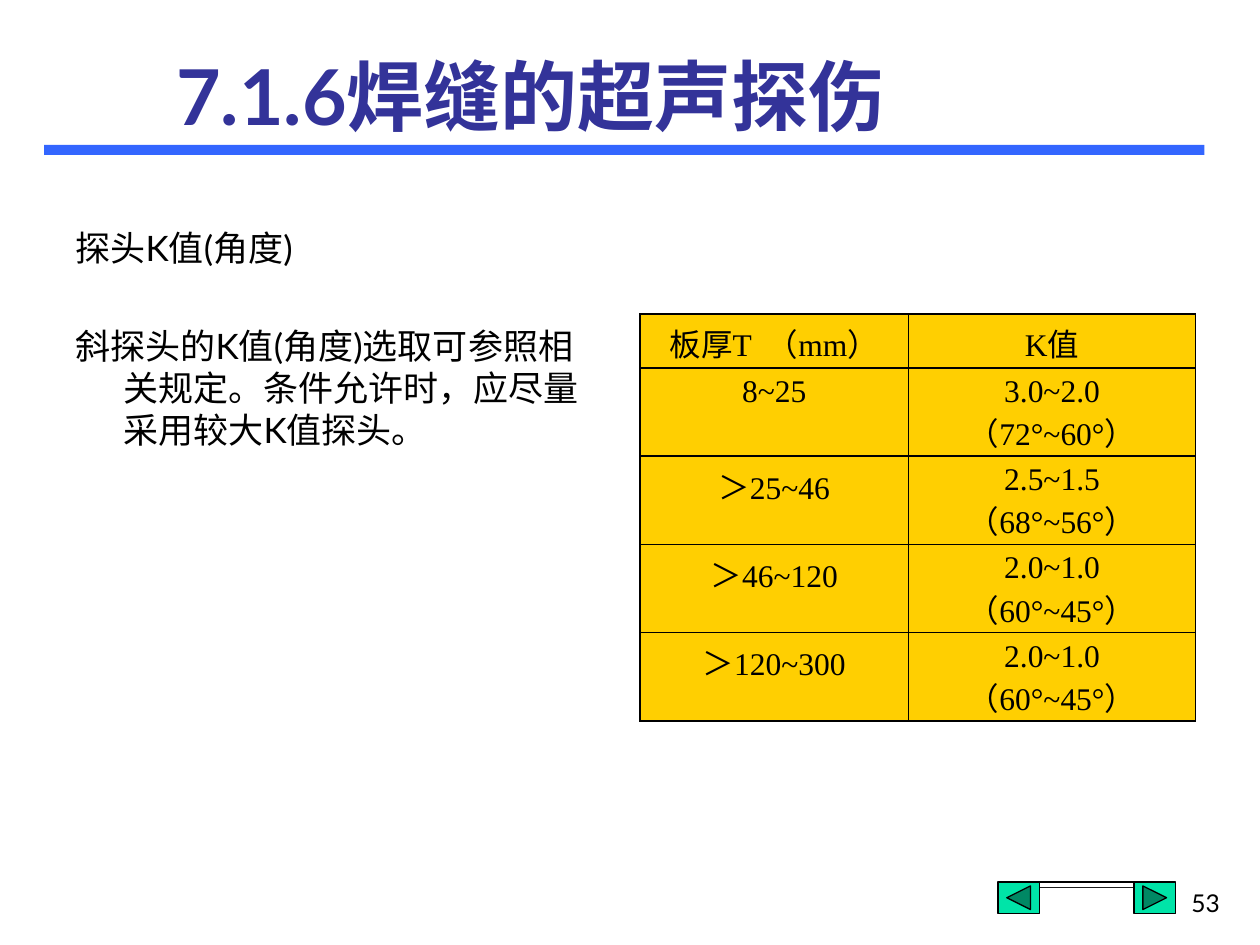
from lxml import etree
from pptx import Presentation
from pptx.dml.color import RGBColor
from pptx.enum import shapes, text
from pptx.oxml import parse_xml
from pptx.oxml.ns import qn
from pptx.util import Inches, Pt

BLACK = RGBColor(0, 0, 0)
TITLE_BLUE = RGBColor(0x33, 0x33, 0x99)
RULE_BLUE = RGBColor(0x33, 0x66, 0xFF)
ROOF_BLUE = RGBColor(0x33, 0x33, 0xCC)
WHITE = RGBColor(0xFF, 0xFF, 0xFF)
BUTTON_GREEN = RGBColor(0x00, 0xE4, 0xA8)
TABLE_GOLD = RGBColor(0xFF, 0xCF, 0x01)
CJK_FONT = "Noto Sans CJK SC"
DRAWING_NS = 'xmlns:a="http://schemas.openxmlformats.org/drawingml/2006/main"'


def style_run(run, size, latin, color=BLACK, bold=False):
    run.font.size = Pt(size)
    run.font.name = latin
    run.font.bold = bold
    run.font.color.rgb = color
    east_asian = etree.SubElement(run.font._element, qn("a:ea"))
    east_asian.set("typeface", CJK_FONT)


def add_text_frame(left, top, width, height, anchor):
    frame = slide.shapes.add_textbox(
        Inches(left), Inches(top), Inches(width), Inches(height)).text_frame
    frame.word_wrap = True
    frame.vertical_anchor = anchor
    return frame


prs = Presentation()
prs.slide_width, prs.slide_height = Inches(10), Inches(7.5)
slide = prs.slides.add_slide(prs.slide_layouts[6])

# Rule under the title
rule = slide.shapes.add_shape(shapes.MSO_SHAPE.RECTANGLE, Inches(0.35), Inches(1.15),
                              Inches(9.21), Inches(0.08))
rule.shadow.inherit = False
rule.fill.solid()
rule.fill.fore_color.rgb = RULE_BLUE
rule.line.fill.background()

# Home button
outline = [(8.62, 6.92), (8.42, 7.09), (8.5, 7.09), (8.5, 7.25), (8.58, 7.25), (8.58, 7.11),
           (8.67, 7.11), (8.67, 7.25), (8.76, 7.25), (8.76, 7.08), (8.83, 7.08)]
builder = slide.shapes.build_freeform(*outline[0], scale=Inches(1))
builder.add_line_segments(outline[1:], close=True)
home = builder.convert_to_shape()
home.fill.gradient()
home.fill.gradient_angle = 270
for stop, color, position in zip(home.fill.gradient_stops, (ROOF_BLUE, WHITE), (0, 1)):
    stop.color.rgb = color
    stop.position = position
home.line.color.rgb = BLACK
home.line.width = Pt(0.75)
home._element.spPr.append(parse_xml(
    f'<a:effectLst {DRAWING_NS}><a:outerShdw blurRad="0" dist="{Pt(5)}" dir="{37 * 60000}" '
    'algn="ctr" rotWithShape="0"><a:srgbClr val="1C1C1C"/></a:outerShdw></a:effectLst>'))

# Previous and next buttons
for left, kind in ((7.92, shapes.MSO_SHAPE.ACTION_BUTTON_BACK_OR_PREVIOUS),
                   (9, shapes.MSO_SHAPE.ACTION_BUTTON_FORWARD_OR_NEXT)):
    button = slide.shapes.add_shape(kind, Inches(left), Inches(7), Inches(0.33), Inches(0.25))
    button.shadow.inherit = False
    button.fill.solid()
    button.fill.fore_color.rgb = BUTTON_GREEN
    button.line.color.rgb = BLACK
    button.line.width = Pt(0.75)

# Page number
page_number = add_text_frame(7.7, 6.83, 2.08, 0.5, text.MSO_ANCHOR.BOTTOM).paragraphs[0]
page_number.text = "53"
page_number.alignment = text.PP_ALIGN.RIGHT
style_run(page_number.runs[0], 14, "Lato")

# Body
body = add_text_frame(0.5, 1.75, 4.42, 4.95, text.MSO_ANCHOR.TOP)
body.text = "探头K值(角度)\n斜探头的K值(角度)选取可参照相关规定。条件允许时，应尽量采用较大K值探头。"
for paragraph, space_before in zip(body.paragraphs, (1, 32)):
    paragraph.space_before = Pt(space_before)
    paragraph.line_spacing = Pt(24)
    properties = paragraph._p.get_or_add_pPr()
    properties.set("marL", str(Inches(0.38)))
    properties.set("indent", str(-Inches(0.38)))
    style_run(paragraph.runs[0], 20, "Lato")

# Probe K values by plate thickness
k_values = [
    ("板厚T  （mm）", "K值"),
    ("8~25", "3.0~2.0（72°~60°）"),
    ("＞25~46", "2.5~1.5（68°~56°）"),
    ("＞46~120", "2.0~1.0（60°~45°）"),
    ("＞120~300", "2.0~1.0（60°~45°）"),
]
table = slide.shapes.add_table(len(k_values), 2, Inches(5.08), Inches(2.49),
                               Inches(4.41), Inches(3.23)).table
for column, width in zip(table.columns, (2.13, 2.28)):
    column.width = Inches(width)
for row, values in zip(table.rows, k_values):
    row.height = Inches(0.43 if values is k_values[0] else 0.7)
    for cell, value in zip(row.cells, values):
        cell.fill.solid()
        cell.fill.fore_color.rgb = TABLE_GOLD
        paragraph = cell.text_frame.paragraphs[0]
        paragraph.text = value
        paragraph.alignment = text.PP_ALIGN.CENTER
        style_run(paragraph.runs[0], 18, "Times New Roman")
        for index, side in enumerate(("lnL", "lnR", "lnT", "lnB")):
            cell._tc.tcPr.insert(index, parse_xml(
                f'<a:{side} {DRAWING_NS} w="{Pt(1)}"><a:solidFill>'
                f'<a:srgbClr val="{BLACK}"/></a:solidFill></a:{side}>'))

# Title
title = add_text_frame(1.3, 0.36, 7.01, 0.79, text.MSO_ANCHOR.MIDDLE).paragraphs[0]
title.text = "7.1.6焊缝的超声探伤"
style_run(title.runs[0], 44, "Lato", TITLE_BLUE, bold=True)

prs.save("out.pptx")
